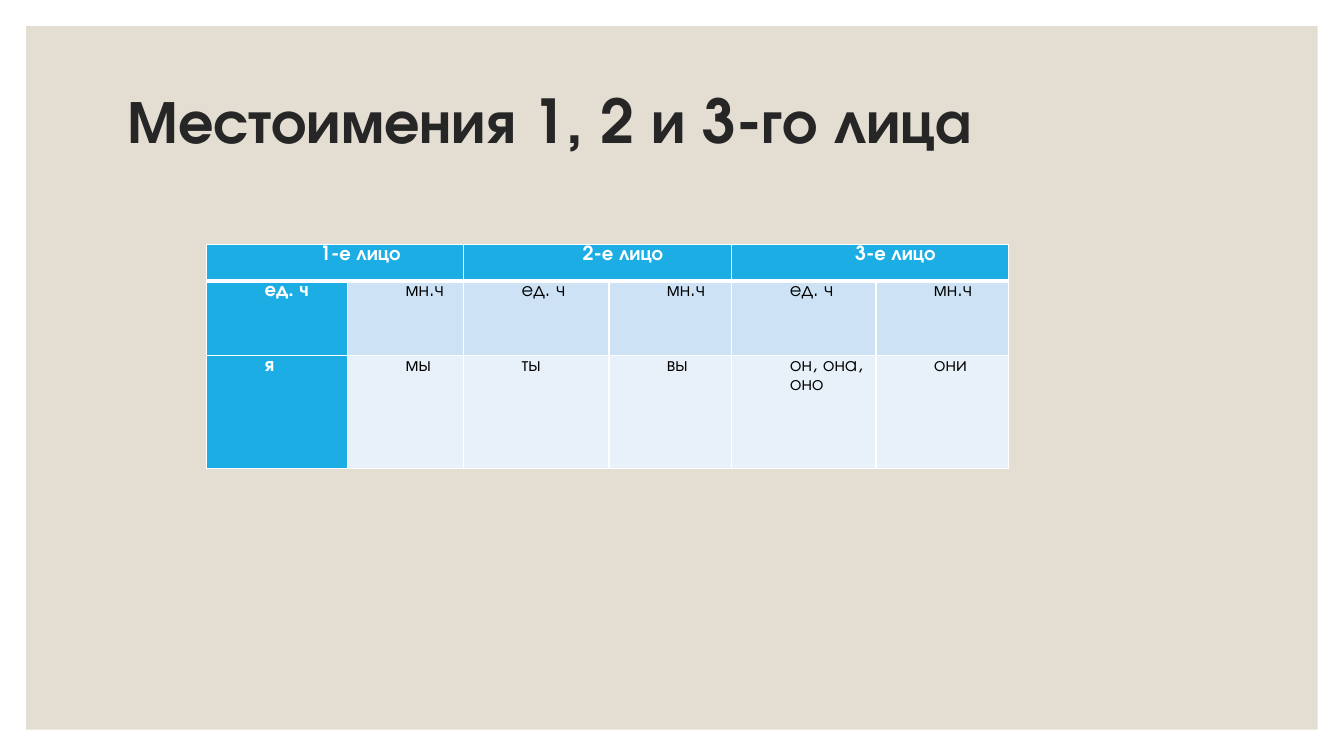
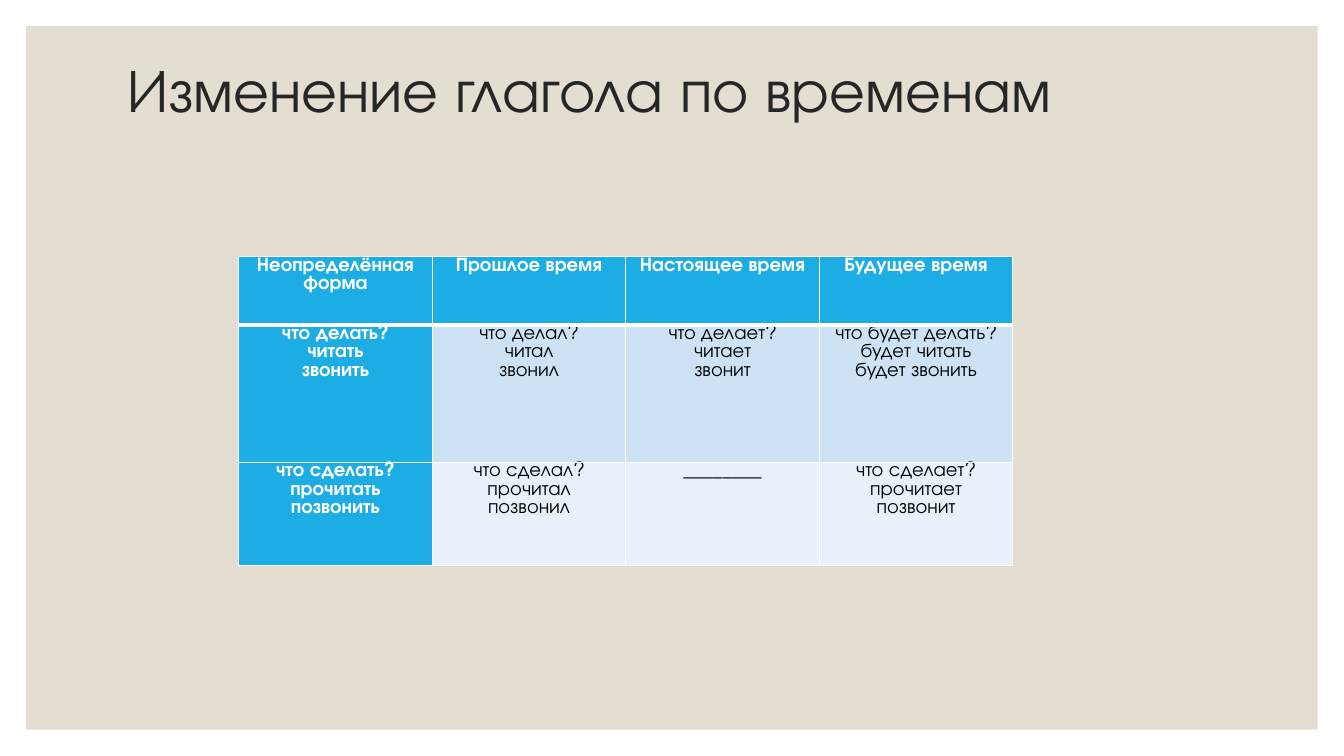
from dataclasses import dataclass

from lxml import etree
from pptx import Presentation
from pptx.dml.color import RGBColor
from pptx.enum.shapes import MSO_SHAPE
from pptx.enum.text import MSO_ANCHOR, PP_ALIGN
from pptx.oxml.ns import qn
from pptx.slide import Slide
from pptx.table import _Cell
from pptx.util import Pt

RECTANGLE = MSO_SHAPE.RECTANGLE
TOP = MSO_ANCHOR.TOP
CENTER, LEFT = PP_ALIGN.CENTER, PP_ALIGN.LEFT

FONT = "TeX Gyre Adventor"
WHITE, BLACK = "FFFFFF", "000000"
BACKDROP, TITLE_INK = "E3DED1", "262626"
ACCENT = "1CADE4"
BODY_BANDS = ("CDE3F5", "E8F1FA")
SLIDE_WIDTH, SLIDE_HEIGHT = 960, 540
BACKDROP_MARGIN = 18.72
TITLE_SIZE, CELL_SIZE = 43.2, 14
CELL_INSET = 5.4
THIN, THICK = 1, 3


@dataclass(frozen=True)
class GrammarTable:
    left: float
    top: float
    columns: tuple[float, ...]
    rows: tuple[float, ...]
    cells: tuple[tuple[str, ...], ...]
    header_span: int = 1
    indent: float = 0
    line_spacing: float = 1.0
    body_align: PP_ALIGN = CENTER


@dataclass(frozen=True)
class Lesson:
    title: str
    title_bold: bool
    title_drop: float
    table: GrammarTable


LESSONS = (
    Lesson(
        "Местоимения 1, 2 и 3-го лица", True, 22,
        GrammarTable(
            left=147.6, top=174.7,
            columns=(100.8, 82.8, 103.8, 87.8, 103, 94.6),
            rows=(26, 53.3, 80.6),
            cells=(
                ("1-е лицо", "", "2-е лицо", "", "3-е лицо", ""),
                ("ед. ч", "мн.ч") * 3,
                ("я", "мы", "ты", "вы", "он, она, оно", "они"),
            ),
            header_span=2, indent=36, line_spacing=1.07, body_align=LEFT,
        ),
    ),
    Lesson(
        "Изменение глагола по временам", False, 0,
        GrammarTable(
            left=170.6, top=183.4,
            columns=(138.24,) * 4,
            rows=(49, 98, 73.6),
            cells=(
                ("Неопределённая форма", "Прошлое время",
                 "Настоящее время", "Будущее время"),
                ("что делать?\nчитать\nзвонить",
                 "что делал?\nчитал\nзвонил",
                 "что делает?\nчитает\nзвонит",
                 "что будет делать?\nбудет читать\nбудет звонить"),
                ("что сделать?\nпрочитать\nпозвонить",
                 "что сделал?\nпрочитал\nпозвонил",
                 "________",
                 "что сделает?\nпрочитает\nпозвонит"),
            ),
        ),
    ),
)


def color(value: str) -> RGBColor:
    return RGBColor.from_string(value)


def style_runs(text_frame, size: float, ink: str, bold: bool) -> None:
    for paragraph in text_frame.paragraphs:
        for run in paragraph.runs:
            run.font.name = FONT
            run.font.size = Pt(size)
            run.font.bold = bold
            run.font.color.rgb = color(ink)


def add_backdrop(slide: Slide) -> None:
    backdrop = slide.shapes.add_shape(
        RECTANGLE, Pt(BACKDROP_MARGIN), Pt(BACKDROP_MARGIN),
        Pt(SLIDE_WIDTH - 2 * BACKDROP_MARGIN),
        Pt(SLIDE_HEIGHT - 2 * BACKDROP_MARGIN))
    backdrop.shadow.inherit = False
    backdrop.fill.solid()
    backdrop.fill.fore_color.rgb = color(BACKDROP)
    backdrop.line.fill.background()


def add_title(slide: Slide, lesson: Lesson) -> None:
    title = slide.shapes.add_textbox(Pt(84), Pt(37), Pt(792), Pt(121))
    frame = title.text_frame
    frame.word_wrap = True
    frame.vertical_anchor = TOP
    frame.margin_top, frame.margin_bottom = Pt(lesson.title_drop), 0
    frame.text = lesson.title
    style_runs(frame, TITLE_SIZE, TITLE_INK, lesson.title_bold)


def set_borders(cell: _Cell, top: float, bottom: float) -> None:
    """Draw white borders; must come before the fill of the cell."""
    properties = cell._tc.get_or_add_tcPr()
    widths = {"a:lnL": THIN, "a:lnR": THIN, "a:lnT": top, "a:lnB": bottom}
    for tag, width in widths.items():
        line = etree.SubElement(properties, qn(tag), w=str(Pt(width)))
        fill = etree.SubElement(line, qn("a:solidFill"))
        etree.SubElement(fill, qn("a:srgbClr"), val=WHITE)


def fill_cell(cell: _Cell, table: GrammarTable, row: int, column: int) -> None:
    is_header = row == 0
    is_accent = is_header or column == 0
    set_borders(cell, THICK if row == 1 else THIN,
                THICK if is_header else THIN)
    cell.fill.solid()
    cell.fill.fore_color.rgb = color(
        ACCENT if is_accent else BODY_BANDS[(row - 1) % 2])
    cell.margin_left = cell.margin_right = Pt(CELL_INSET)
    cell.margin_top = cell.margin_bottom = 0
    cell.vertical_anchor = TOP
    cell.text_frame.text = table.cells[row][column]
    for paragraph in cell.text_frame.paragraphs:
        paragraph.alignment = CENTER if is_header else table.body_align
        paragraph.line_spacing = table.line_spacing
        paragraph._p.get_or_add_pPr().set("marL", str(Pt(table.indent)))
    style_runs(cell.text_frame, CELL_SIZE,
               WHITE if is_accent else BLACK, is_accent)


def add_grammar_table(slide: Slide, table: GrammarTable) -> None:
    grid = slide.shapes.add_table(
        len(table.rows), len(table.columns), Pt(table.left), Pt(table.top),
        Pt(sum(table.columns)), Pt(sum(table.rows))).table
    grid.first_row = grid.horz_banding = False
    for column, width in enumerate(table.columns):
        grid.columns[column].width = Pt(width)
    for row, height in enumerate(table.rows):
        grid.rows[row].height = Pt(height)
        for column in range(len(table.columns)):
            fill_cell(grid.cell(row, column), table, row, column)
    if table.header_span > 1:
        for start in range(0, len(table.columns), table.header_span):
            grid.cell(0, start).merge(
                grid.cell(0, start + table.header_span - 1))


def main() -> None:
    presentation = Presentation()
    presentation.slide_width = Pt(SLIDE_WIDTH)
    presentation.slide_height = Pt(SLIDE_HEIGHT)
    blank_layout = presentation.slide_layouts[6]
    for lesson in LESSONS:
        slide = presentation.slides.add_slide(blank_layout)
        add_backdrop(slide)
        add_title(slide, lesson)
        add_grammar_table(slide, lesson.table)
    presentation.save("out.pptx")


if __name__ == "__main__":
    main()
